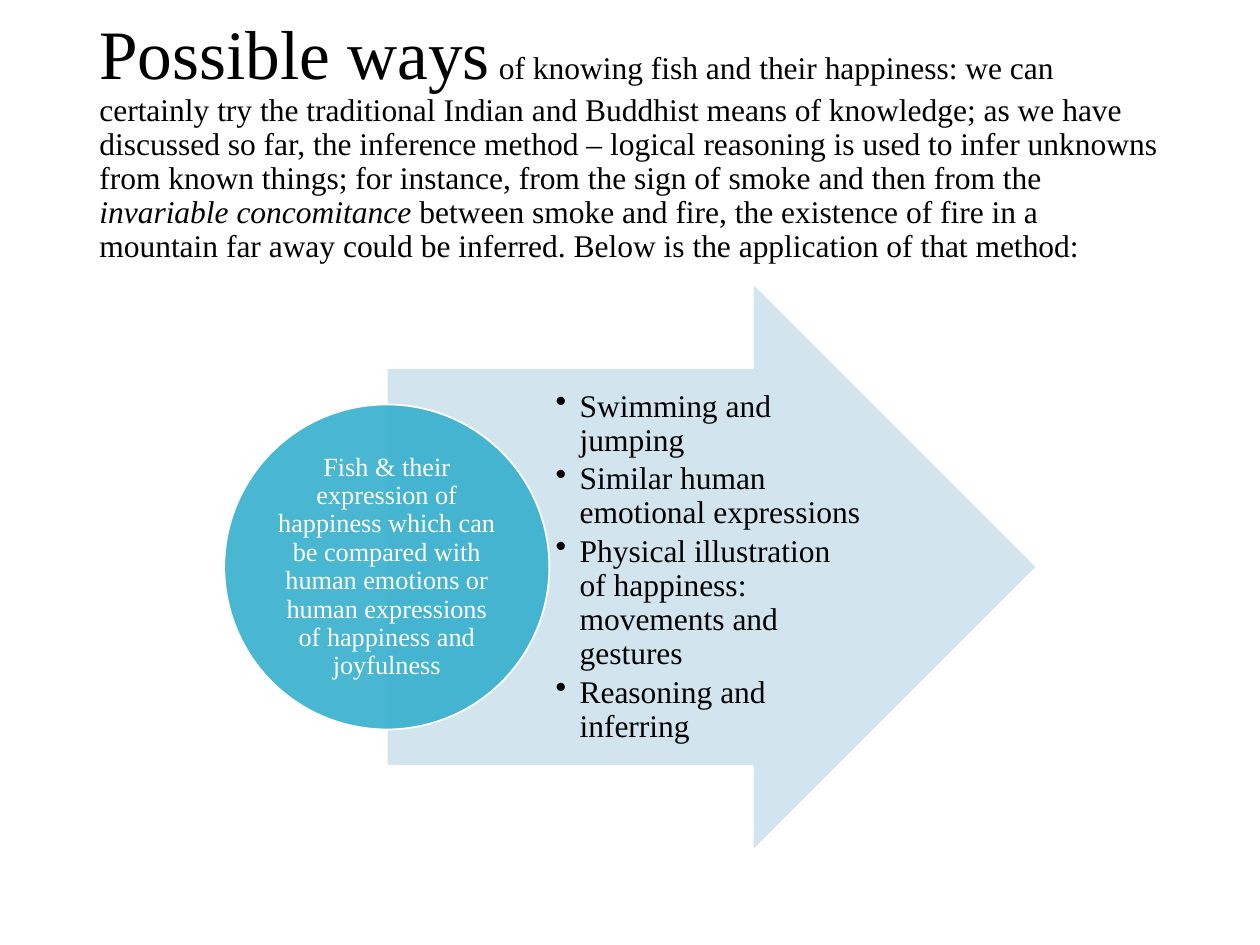
from lxml import etree
from pptx import Presentation
from pptx import util as u
from pptx.dml.color import RGBColor
from pptx.enum import shapes, text
from pptx.oxml.ns import qn

# Content: paragraphs are lists of (text, size, italic) runs
TITLE = [[
    ("Possible ways", 39.6, False),
    (" ", 19.8, False),
    ("of knowing fish and their happiness: we can certainly try the traditional "
     "Indian and Buddhist means of knowledge; as we have discussed so far, the "
     "inference method – logical reasoning is used to infer unknowns from known "
     "things; for instance, from the sign of smoke and then from the ", 18, False),
    ("invariable concomitance", 18, True),
    (" between smoke and fire, the existence of fire in a mountain far away could "
     "be inferred. Below is the application of that method:", 18, False),
]]
SIGNS = [[(sign, 18, False)] for sign in (
    "Swimming and jumping",
    "Similar human emotional expressions",
    "Physical illustration of happiness: movements and gestures",
    "Reasoning and inferring",
)]
SUBJECT = [[("Fish & their expression of happiness which can be compared with human "
             "emotions or human expressions of happiness and joyfulness", 15, False)]]

COLORS = {"text": "000000", "light": "FFFFFF", "arrow": "CEE3ED", "circle": "36AFCE"}
FONT = "Times New Roman"

# Layout in inches: the circle is centred on the tail of the arrow
W, H = 10, 7.5
MARGIN = 0.69
MID_Y = 0.6 * H
TAIL_X, ARROW_W, ARROW_H = 3.07, 5.16, 4.51
DIAMETER = 2.58
INNER = 1.82  # square inscribed in the circle
SIGNS_W, SIGNS_H = 2.51, 0.7 * ARROW_H

prs = Presentation()
prs.slide_width, prs.slide_height = u.Inches(W), u.Inches(H)
s = prs.slides.add_slide(prs.slide_layouts[6])


def centred(x, w, h):
    """Box starting at x, centred on the diagram's axis."""
    return [u.Inches(v) for v in (x, MID_Y - h / 2, w, h)]


def add_shape(kind, box, color):
    sp = s.shapes.add_shape(kind, *box)
    sp.shadow.inherit = False
    sp.fill.solid()
    sp.fill.fore_color.rgb = RGBColor.from_string(COLORS[color])
    srgb = sp.fill._xPr.find(qn("a:solidFill"))[0]
    etree.SubElement(srgb, qn("a:alpha"), val="90000")
    sp.line.color.rgb = RGBColor.from_string(COLORS["light"])
    sp.line.width = u.Pt(1)
    return sp


def add_text(paragraphs, box, color="text", align=text.PP_ALIGN.LEFT,
             insets=(0.1, 0.05, 0.1, 0.05), after=0, bullet=None):
    tf = s.shapes.add_textbox(*box).text_frame
    tf.word_wrap = True
    tf.vertical_anchor = text.MSO_ANCHOR.MIDDLE
    (tf.margin_left, tf.margin_top,
     tf.margin_right, tf.margin_bottom) = map(u.Inches, insets)
    for i, runs in enumerate(paragraphs):
        p = tf.add_paragraph() if i else tf.paragraphs[0]
        p.alignment, p.line_spacing, p.space_after = align, 0.9, u.Pt(after)
        if bullet:
            pPr = p._p.get_or_add_pPr()
            indent = u.Inches(0.19)
            pPr.set("marL", str(indent))
            pPr.set("indent", str(-indent))
            etree.SubElement(pPr, qn("a:buChar"), char=bullet)
        for words, size, italic in runs:
            r = p.add_run()
            r.text = words
            r.font.name, r.font.size, r.font.italic = FONT, u.Pt(size), italic
            r.font.color.rgb = RGBColor.from_string(COLORS[color])


# Introduction
add_text(TITLE, [u.Inches(v) for v in (MARGIN, 0.4, W - 2 * MARGIN, 1.45)])

# Arrow with the signs
arrow = add_shape(shapes.MSO_SHAPE.RIGHT_ARROW,
                  centred(TAIL_X, ARROW_W, ARROW_H), "arrow")
arrow.adjustments[0], arrow.adjustments[1] = 0.7, 0.5
add_text(SIGNS, centred(TAIL_X + DIAMETER / 2, SIGNS_W, SIGNS_H),
         insets=(0.05, 0.01, 0.03, 0.01), after=2.7, bullet="•")

# Circle with the subject
add_shape(shapes.MSO_SHAPE.OVAL,
          centred(TAIL_X - DIAMETER / 2, DIAMETER, DIAMETER), "circle")
add_text(SUBJECT, centred(TAIL_X - INNER / 2, INNER, INNER), color="light",
         align=text.PP_ALIGN.CENTER, insets=(0.01,) * 4)

prs.save("out.pptx")
